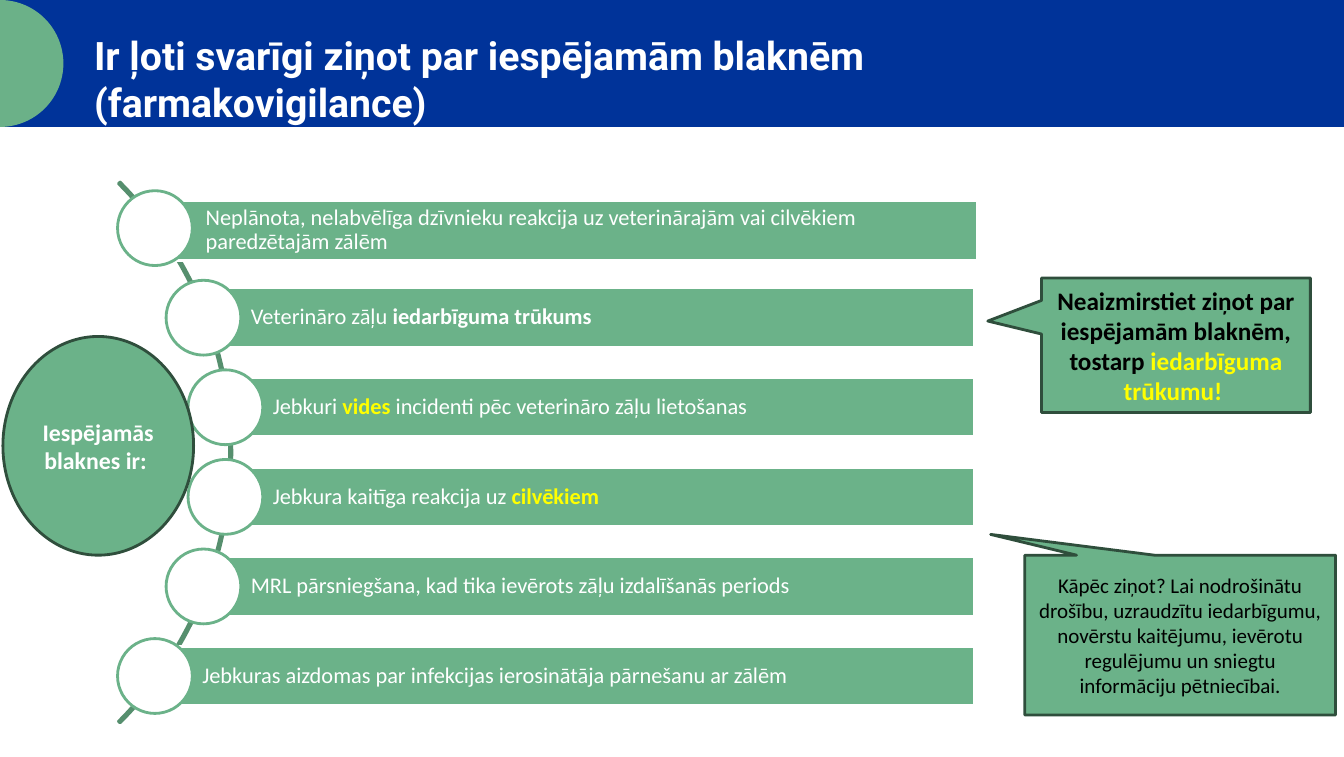
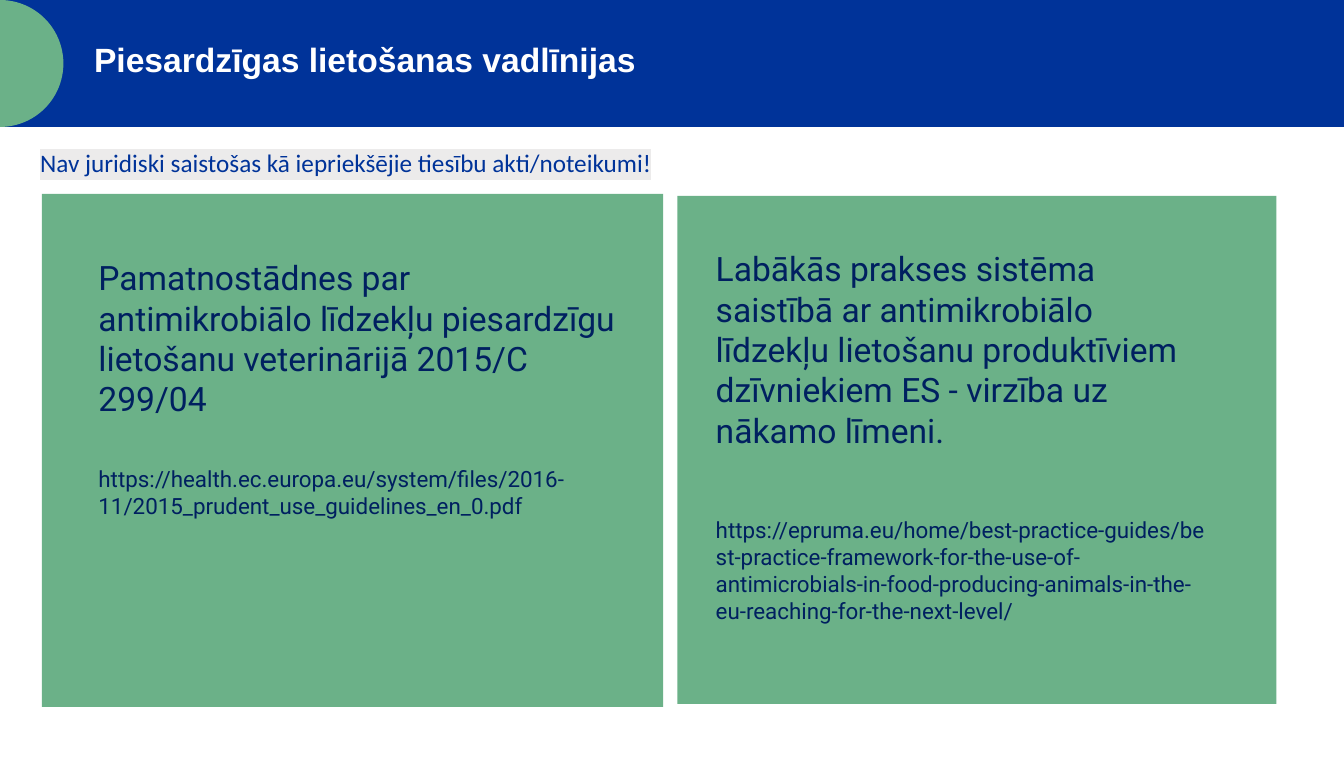
import math

import pptx
import pptx.dml.color
import pptx.enum.shapes
import pptx.enum.text
import pptx.oxml
import pptx.oxml.ns
import pptx.util

RGBColor = pptx.dml.color.RGBColor
Preset = pptx.enum.shapes.MSO_SHAPE
Align = pptx.enum.text.PP_ALIGN
Anchor = pptx.enum.text.MSO_ANCHOR
Inches, Pt = pptx.util.Inches, pptx.util.Pt

BLUE = RGBColor(0x00, 0x33, 0x99)
NAVY = RGBColor(0x00, 0x20, 0x60)
GREEN = RGBColor(0x6B, 0xB1, 0x88)
BRIGHT_GREEN = RGBColor(0x6B, 0xB2, 0x89)
MID_GREEN = RGBColor(0x56, 0x8F, 0x6E)
DARK_GREEN = RGBColor(0x2F, 0x4E, 0x3C)
YELLOW = RGBColor(0xFF, 0xFF, 0x00)
WHITE = RGBColor(0xFF, 0xFF, 0xFF)
BLACK = RGBColor(0x00, 0x00, 0x00)
PALE_GREY = "ECEBEB"

# The slide is a grid of 32 columns and 18 rows
deck = pptx.Presentation()
deck.slide_width, deck.slide_height = Inches(13.33), Inches(7.51)
COLUMNS, ROWS = 32, 18
COL, ROW = deck.slide_width / COLUMNS, deck.slide_height / ROWS
BAND_ROWS = 3.02


def add_figure(slide, outline, cells, fill=None, line=None):
    """Add a preset in cells (left, top, columns, rows), or an outline of grid points."""
    if isinstance(outline, list):
        points = [(round(x * COL), round(y * ROW)) for x, y in outline]
        builder = slide.shapes.build_freeform(*points[0])
        builder.add_line_segments(points[1:])
        figure = builder.convert_to_shape()
    else:
        left, top, columns, rows = cells
        figure = slide.shapes.add_shape(outline, round(left * COL), round(top * ROW),
                                        round(columns * COL), round(rows * ROW))
    figure.shadow.inherit = False
    if fill is None:
        figure.fill.background()
    else:
        figure.fill.solid()
        figure.fill.fore_color.rgb = fill
    if line is None:
        figure.line.fill.background()
    else:
        figure.line.color.rgb = line
        figure.line.width = Pt(2)
    return figure


def write(frame, *paragraphs, font="Calibri", size=16, color=WHITE, bold=False,
          align=Align.LEFT, anchor=Anchor.MIDDLE, spacing=None, gap=0,
          highlight=None, margins=(0.1, 0.05, 0.1, 0.05)):
    """Fill a frame; a paragraph is a list of (text, changes to the run's format)."""
    frame.word_wrap = True
    frame.auto_size = pptx.enum.text.MSO_AUTO_SIZE.NONE
    frame.vertical_anchor = anchor
    (frame.margin_left, frame.margin_top,
     frame.margin_right, frame.margin_bottom) = map(Inches, margins)
    for index, runs in enumerate(paragraphs):
        paragraph = frame.add_paragraph() if index else frame.paragraphs[0]
        paragraph.alignment = align
        if spacing:
            paragraph.line_spacing = spacing
        if index:
            paragraph.space_before = Pt(gap)
        for text, changes in runs:
            run = paragraph.add_run()
            run.text = text
            run.font.name = font
            run.font.size = Pt(changes.get("size", size))
            run.font.bold = changes.get("bold", bold)
            run.font.color.rgb = changes.get("color", color)
            if highlight:
                mark = pptx.oxml.parse_xml(
                    f'<a:highlight {pptx.oxml.ns.nsdecls("a")}>'
                    f'<a:srgbClr val="{highlight}"/></a:highlight>')
                properties = run._r.get_or_add_rPr()
                properties.find(pptx.oxml.ns.qn("a:solidFill")).addnext(mark)


# Shared layout: title place, blue band and green half disc
layout = deck.slide_layouts[5]
layout_title, *footers = list(layout.placeholders)
for footer in footers:
    footer.element.getparent().remove(footer.element)
layout_title.left, layout_title.top = round(2 * COL), round(0.62 * ROW)
layout_title.width, layout_title.height = round(25.4 * COL), round(1.25 * ROW)

reporting = deck.slides.add_slide(layout)
guidelines = deck.slides.add_slide(layout)

radius = BAND_ROWS / 2
band = add_figure(reporting, Preset.RECTANGLE, (0, 0, COLUMNS, BAND_ROWS), BLUE)
disc = add_figure(reporting, [(0, 0), (radius, radius), (0, BAND_ROWS)], None, GREEN)
upper_side, lower_side = list(disc.element.iter(pptx.oxml.ns.qn("a:lnTo")))[:2]
upper_side.addprevious(pptx.oxml.parse_xml(
    f'<a:arcTo {pptx.oxml.ns.nsdecls("a")} wR="{disc.width}" hR="{disc.height // 2}" '
    'stAng="16200000" swAng="10800000"/>'))
for side in (upper_side, lower_side):
    side.getparent().remove(side)
for position, decoration in enumerate((band, disc), start=2):
    layout_title.element.getparent().insert(position, decoration.element)

# Slide 1: reporting of adverse events
write(reporting.shapes.title.text_frame,
      [("Ir ļoti svarīgi ziņot par iespējamām blaknēm (farmakovigilance)", {})],
      font="Roboto", size=28, bold=True, anchor=Anchor.TOP)

reminder = add_figure(reporting, Preset.RECTANGULAR_CALLOUT, (24.8, 6.61, 6.4, 3.2),
                      BRIGHT_GREEN, DARK_GREEN)
reminder.adjustments[0], reminder.adjustments[1] = -0.7, -0.18
write(reminder.text_frame,
      [("Neaizmirstiet ziņot par iespējamām blaknēm, tostarp ", {}),
       ("iedarbīguma trūkumu! ", {"color": YELLOW})],
      size=18, color=BLACK, bold=True, align=Align.CENTER)

reason = add_figure(reporting, Preset.RECTANGULAR_CALLOUT, (24.4, 13.2, 7.4, 3.8),
                    BRIGHT_GREEN, DARK_GREEN)
reason.adjustments[0], reason.adjustments[1] = -0.61, -0.63
write(reason.text_frame,
      [("Kāpēc ziņot? Lai nodrošinātu drošību, uzraudzītu iedarbīgumu, novērstu "
        "kaitējumu, ievērotu regulējumu un sniegtu informāciju pētniecībai.", {})],
      size=15, color=BLACK, align=Align.CENTER)

ARC_X, ARC_Y, ARC_RADIUS = -3.58, 10.76, 9.1
arc = add_figure(reporting, Preset.BLOCK_ARC,
                 (ARC_X - ARC_RADIUS, ARC_Y - ARC_RADIUS, 2 * ARC_RADIUS, 2 * ARC_RADIUS),
                 line=MID_GREEN)
for index, value in enumerate((189, 27, 0.003)):
    arc.adjustments[index] = value

events = [
    [("Neplānota, nelabvēlīga dzīvnieku reakcija uz veterinārajām vai cilvēkiem "
      "paredzētajām zālēm", {})],
    [("Veterināro zāļu ", {}), ("iedarbīguma trūkums", {"bold": True})],
    [("Jebkuri ", {}), ("vides", {"color": YELLOW, "bold": True}),
     (" incidenti pēc veterināro zāļu lietošanas", {})],
    [("Jebkura kaitīga reakcija uz ", {}),
     ("cilvēkiem", {"color": YELLOW, "bold": True})],
    [("MRL pārsniegšana, kad tika ievērots zāļu izdalīšanās periods", {})],
    [("Jebkuras aizdomas par infekcijas ierosinātāja pārnešanu ar zālēm", {})],
]
EVENT_STEP, BAR_RIGHT, BAR_ROWS, KNOB = 2.13, 23.2, 1.41, 1.78
for index, event in enumerate(events):
    drop = (index - (len(events) - 1) / 2) * EVENT_STEP
    knob_x = ARC_X + math.sqrt((ARC_RADIUS - 0.09) ** 2 - drop ** 2)
    middle = ARC_Y + drop - 0.01
    shift_x, shift_y = (0, 0) if index else (0.08, 0.06)
    bar = add_figure(reporting, Preset.RECTANGLE,
                     (knob_x + shift_x, middle - BAR_ROWS / 2 + shift_y,
                      BAR_RIGHT - knob_x, BAR_ROWS),
                     BRIGHT_GREEN, WHITE)
    write(bar.text_frame, event, spacing=0.9, margins=(0.47, 0.04, 0.04, 0.04))
    add_figure(reporting, Preset.OVAL,
               (knob_x - KNOB / 2, middle - KNOB / 2, KNOB, KNOB), WHITE, BRIGHT_GREEN)

topic = add_figure(reporting, Preset.OVAL, (0.07, 8, 4.54, 5.2), BRIGHT_GREEN, DARK_GREEN)
write(topic.text_frame, [("Iespējamās blaknes ir: ", {})],
      size=17, bold=True, align=Align.CENTER)

# Slide 2: guidelines on prudent use
title = guidelines.shapes.title
title.left, title.top = layout_title.left, round(0.81 * ROW)
title.width, title.height = layout_title.width, layout_title.height
write(title.text_frame, [("Piesardzīgas lietošanas vadlīnijas", {})],
      font="Arial", size=24, bold=True, anchor=Anchor.TOP)

sources = [
    ((1, 4.61, 14.79, 12.2), (0.56, 0.63, 0.38, 0.05), 33.5,
     "Pamatnostādnes par antimikrobiālo līdzekļu piesardzīgu lietošanu "
     "veterinārijā 2015/C 299/04",
     "https://health.ec.europa.eu/system/files/2016-11/"
     "2015_prudent_use_guidelines_en_0.pdf"),
    ((16.13, 4.66, 14.26, 12.08), (0.38, 0.52, 0.68, 0.05), 28,
     "Labākās prakses sistēma saistībā ar antimikrobiālo līdzekļu lietošanu "
     "produktīviem dzīvniekiem ES - virzība uz nākamo līmeni.",
     " https://epruma.eu/home/best-practice-guides/best-practice-framework-for-the-"
     "use-of-antimicrobials-in-food-producing-animals-in-the-eu-reaching-for-the-"
     "next-level/"),
]
for cells, margins, gap, heading, address in sources:
    card = add_figure(guidelines, Preset.RECTANGLE, cells, GREEN)
    write(card.text_frame, [(heading, {})], [(address, {"size": 16})],
          font="Roboto", size=24, color=NAVY, anchor=Anchor.TOP, gap=gap, margins=margins)

legal_note = guidelines.shapes.add_textbox(round(0.72 * COL), round(3.39 * ROW),
                                           round(18.3 * COL), round(0.96 * ROW))
write(legal_note.text_frame,
      [("Nav juridiski saistošas kā iepriekšējie tiesību akti/noteikumi!", {})],
      size=18, color=BLUE, anchor=Anchor.TOP, highlight=PALE_GREY)

deck.save("out.pptx")
